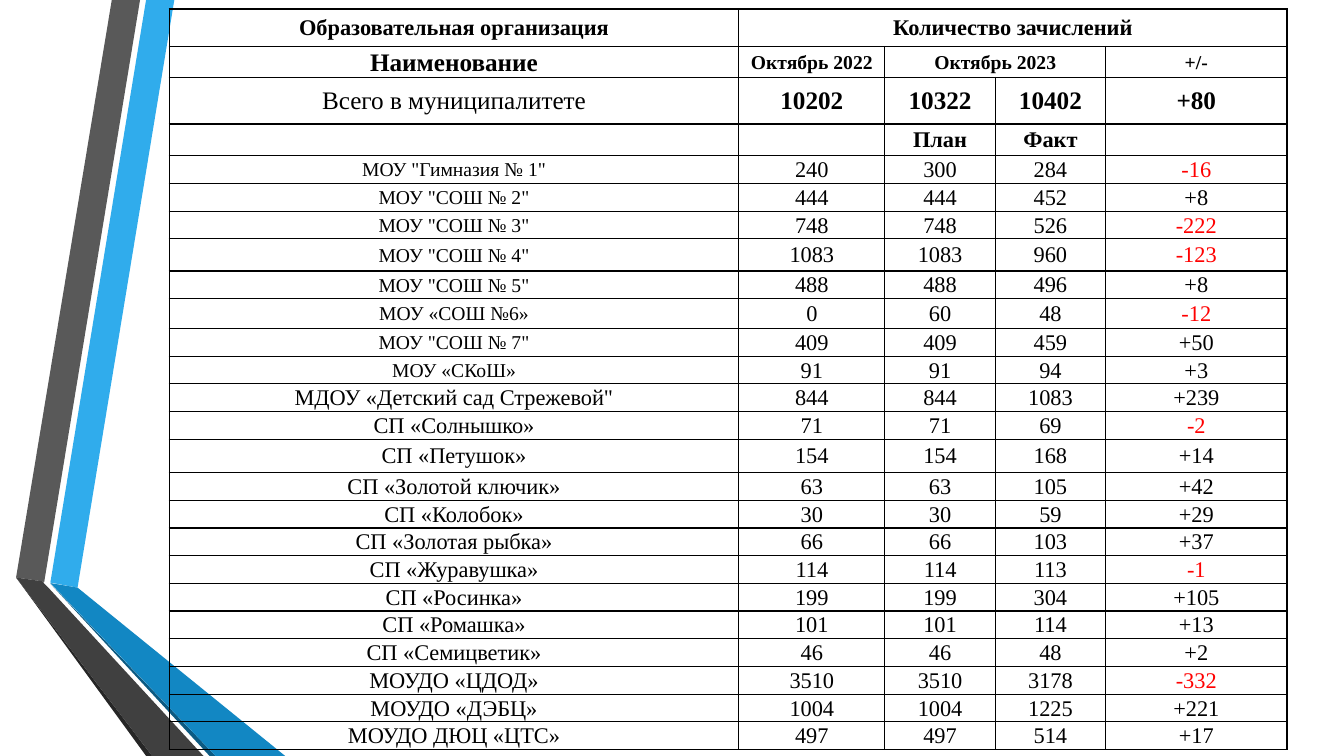
from lxml import etree
from pptx import Presentation
from pptx import util as u
from pptx.dml import color
from pptx.enum import text
from pptx.oxml import ns

PX = 4572  # EMU in one px, 200 px to the inch
FONT = "Times New Roman"
BLACK, RED = "000000", "FF0000"

# Ribbon bands on the left: fill and outline points
RIBBONS = [
    ("30ACEC", [(100, 1156), (154, 1166), (346, 0), (290, 0)]),
    ("595959", [(278, 0), (222, 0), (32, 1146), (88, 1154)]),
    ("262626", [(32, 1146), (290, 1500), (302, 1500)]),
    ("0C5A82", [(100, 1158), (416, 1500), (428, 1500)]),
    ("1287C3", [(100, 1157), (428, 1500), (566, 1500), (154, 1166)]),
    ("404040", [(404, 1500), (96, 1166), (86, 1156), (88, 1154),
                (32, 1146), (302, 1500)]),
]

# Table content: organisation, October 2022, plan, fact, difference
HEADINGS = [
    ("Образовательная организация", "Количество зачислений", "", "", ""),
    ("Наименование", "Октябрь 2022", "Октябрь 2023", "", "+/-"),
    ("Всего в муниципалитете", "10202", "10322", "10402", "+80"),
    ("", "", "План", "Факт", ""),
]
SCHOOLS = [
    ('МОУ "Гимназия № 1"', "240", "300", "284", "-16"),
    ('МОУ "СОШ № 2"', "444", "444", "452", "+8"),
    ('МОУ "СОШ № 3"', "748", "748", "526", "-222"),
    ('МОУ "СОШ № 4"', "1083", "1083", "960", "-123"),
    ('МОУ "СОШ № 5"', "488", "488", "496", "+8"),
    ("МОУ «СОШ №6»", "0", "60", "48", "-12"),
    ('МОУ "СОШ № 7"', "409", "409", "459", "+50"),
    ("МОУ «СКоШ»", "91", "91", "94", "+3"),
]
OTHERS = [
    ('МДОУ «Детский сад Стрежевой"', "844", "844", "1083", "+239"),
    ("СП «Солнышко»", "71", "71", "69", "-2"),
    ("СП «Петушок»", "154", "154", "168", "+14"),
    ("СП «Золотой ключик»", "63", "63", "105", "+42"),
    ("СП «Колобок»", "30", "30", "59", "+29"),
    ("СП «Золотая рыбка»", "66", "66", "103", "+37"),
    ("СП «Журавушка»", "114", "114", "113", "-1"),
    ("СП «Росинка»", "199", "199", "304", "+105"),
    ("СП «Ромашка»", "101", "101", "114", "+13"),
    ("СП «Семицветик»", "46", "46", "48", "+2"),
    ("МОУДО «ЦДОД»", "3510", "3510", "3178", "-332"),
    ("МОУДО «ДЭБЦ»", "1004", "1004", "1225", "+221"),
    ("МОУДО ДЮЦ «ЦТС»", "497", "497", "514", "+17"),
]
COLUMN_WIDTHS = [1130, 290, 219, 219, 360]
ROW_HEIGHT = 55
SPECIAL_HEIGHTS = {0: 74, 1: 62, 2: 92, 3: 62, 7: 64, 9: 59, 14: 66}


def px(length):
    return u.Emu(length * PX)


def rgb(value):
    return color.RGBColor.from_string(value)


def add_ribbon(page, fill, points):
    builder = page.shapes.build_freeform(*points[0], scale=PX)
    builder.add_line_segments(points[1:], close=True)
    ribbon = builder.convert_to_shape()
    ribbon.shadow.inherit = False
    ribbon.fill.solid()
    ribbon.fill.fore_color.rgb = rgb(fill)
    ribbon.line.fill.background()


def add_borders(cell):
    properties = cell._tc.get_or_add_tcPr()
    for position, side in enumerate(("lnL", "lnR", "lnT", "lnB")):
        line = etree.Element(ns.qn(f"a:{side}"), w=str(u.Pt(1)))
        fill = etree.SubElement(line, ns.qn("a:solidFill"))
        etree.SubElement(fill, ns.qn("a:srgbClr"), val=BLACK)
        properties.insert(position, line)


def format_cell(cell):
    cell.fill.background()
    cell.vertical_anchor = text.MSO_ANCHOR.MIDDLE
    cell.margin_left = cell.margin_right = cell.margin_top = px(2)
    cell.margin_bottom = 0
    add_borders(cell)


def write_cell(cell, wording, size, bold, ink):
    para = cell.text_frame.paragraphs[0]
    para.text = wording
    para.alignment = text.PP_ALIGN.CENTER
    para.font.name = FONT
    para.font.size = u.Pt(size)
    para.font.bold = bold
    para.font.color.rgb = rgb(ink)


def text_size(row, column):
    if row == 1:
        return 18 if column == 0 else 14
    if row == 2:
        return 18
    is_school = len(HEADINGS) <= row < len(HEADINGS) + len(SCHOOLS)
    return 14 if is_school and column == 0 else 16


def add_enrolment_table(page, left, top):
    rows = HEADINGS + SCHOOLS + OTHERS
    heights = [SPECIAL_HEIGHTS.get(row, ROW_HEIGHT) for row in range(len(rows))]
    frame = page.shapes.add_table(len(rows), len(COLUMN_WIDTHS), px(left), px(top),
                                  px(sum(COLUMN_WIDTHS)), px(sum(heights)))
    table = frame.table
    table.first_row = table.horz_banding = False
    for column, width in zip(table.columns, COLUMN_WIDTHS):
        column.width = px(width)
    for row, (height, wordings) in enumerate(zip(heights, rows)):
        table.rows[row].height = px(height)
        for column, wording in enumerate(wordings):
            cell = table.cell(row, column)
            format_cell(cell)
            if wording:
                bold = row < len(HEADINGS) and (row, column) != (2, 0)
                ink = RED if wording.startswith("-") else BLACK
                write_cell(cell, wording, text_size(row, column), bold, ink)
    # Headings that span several columns
    table.cell(0, 1).merge(table.cell(0, 4))
    table.cell(1, 2).merge(table.cell(1, 3))


def main():
    deck = Presentation()
    deck.slide_width, deck.slide_height = px(2667), px(1500)
    page = deck.slides.add_slide(deck.slide_layouts[6])
    # Ribbon behind the table
    for fill, points in RIBBONS:
        add_ribbon(page, fill, points)
    # Enrolment figures
    add_enrolment_table(page, 336, 18)
    deck.save("out.pptx")


if __name__ == "__main__":
    main()
